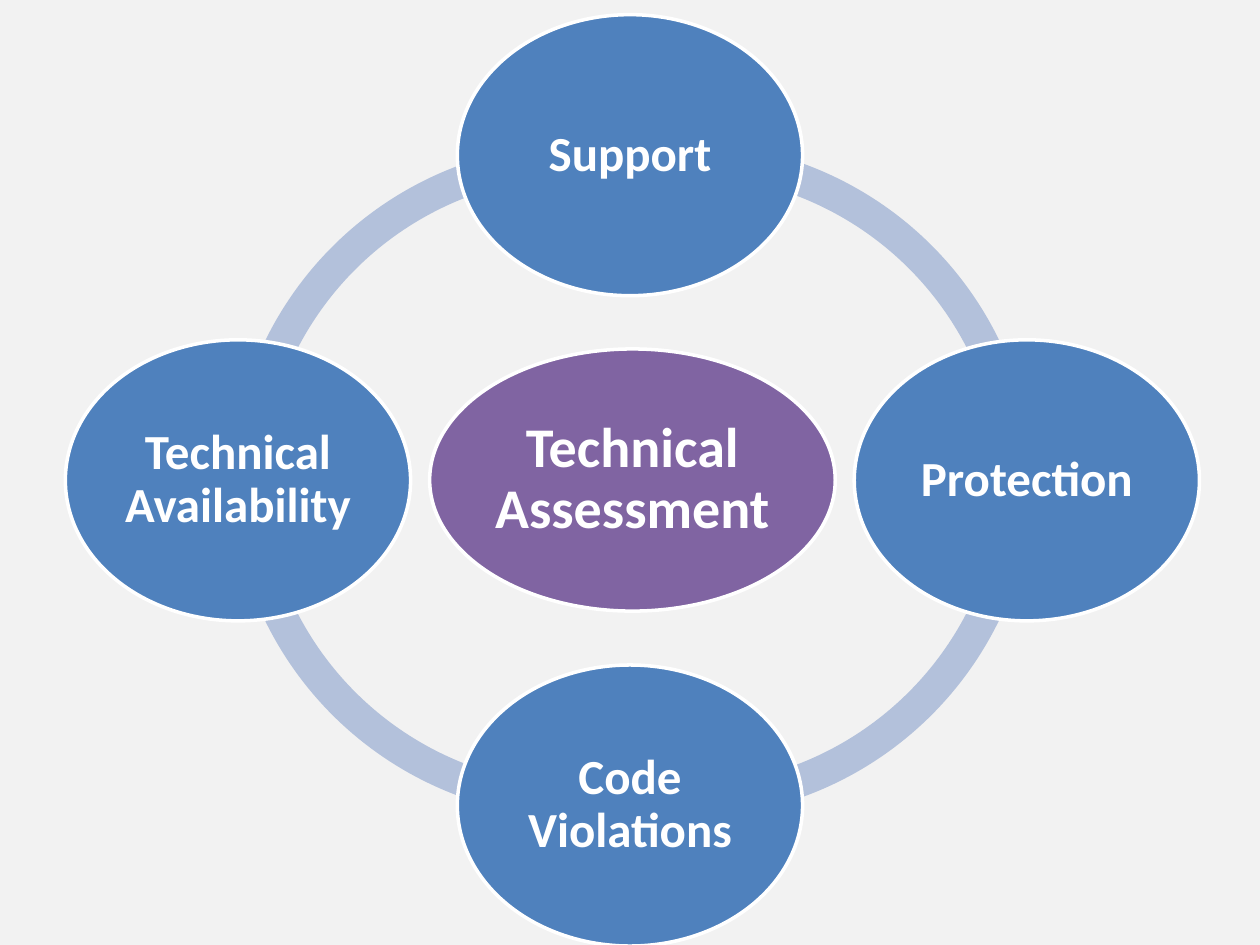
import dataclasses

import pptx
import pptx.dml.color
import pptx.enum.shapes
import pptx.enum.text
import pptx.util

Pt = pptx.util.Pt
RGB = pptx.dml.color.RGBColor.from_string
SHAPES = pptx.enum.shapes.MSO_SHAPE


@dataclasses.dataclass(frozen=True)
class Theme:
    background: str = "F2F2F2"
    ring: str = "B3C1DB"
    hub: str = "8064A2"
    node: str = "4F81BD"
    white: str = "FFFFFF"
    font: str = "Calibri"
    hub_size: int = 32
    node_size: int = 28


THEME = Theme()

# Offsets of each centre from the diagram centre, in points
NODES = [
    ("Support", 0, -185.8),
    ("Protection", 226.8, 0),
    ("Code Violations", 0, 185.8),
    ("Technical Availability", -224, 0),
]
# Offset x, offset y, start and end angle in degrees
ARCS = [
    (-28, 8.5, 182.4, 278.1),
    (-28, -8, 81.9, 177.6),
    (30.3, -8, 2.3, 99),
    (30.3, 7.8, 261, 357.7),
]


def add_centred(slide, kind, centre_x, centre_y, width, height, fill):
    """Add a filled preset shape around its centre."""
    shape = slide.shapes.add_shape(
        kind, Pt(centre_x - width / 2), Pt(centre_y - height / 2), Pt(width), Pt(height))
    shape.shadow.inherit = False
    shape.fill.solid()
    shape.fill.fore_color.rgb = RGB(fill)
    return shape


def add_arc(slide, centre_x, centre_y, start, end):
    """Add one quarter of the ring."""
    diameter, thickness = 401.8, 0.046
    arc = add_centred(slide, SHAPES.BLOCK_ARC, centre_x, centre_y, diameter, diameter, THEME.ring)
    arc.line.fill.background()
    # Adjustments count 0.6 for each degree
    for index, value in enumerate((start * 0.6, end * 0.6, thickness)):
        arc.adjustments[index] = value


def add_label_ellipse(slide, centre_x, centre_y, width, height, text, fill, size):
    """Add an outlined ellipse with a bold centred label."""
    ellipse = add_centred(slide, SHAPES.OVAL, centre_x, centre_y, width, height, fill)
    ellipse.line.color.rgb = RGB(THEME.white)
    ellipse.line.width = Pt(2)

    frame = ellipse.text_frame
    frame_format = {"word_wrap": True, "vertical_anchor": pptx.enum.text.MSO_ANCHOR.MIDDLE}
    for side in ("left", "right", "top", "bottom"):
        frame_format[f"margin_{side}"] = Pt(3)
    paragraph = frame.paragraphs[0]
    run = paragraph.add_run()
    run.text = text
    formats = [
        (frame, frame_format),
        (paragraph, {"alignment": pptx.enum.text.PP_ALIGN.CENTER, "line_spacing": 0.9}),
        (run.font, {"name": THEME.font, "size": Pt(size), "bold": True}),
    ]
    for target, values in formats:
        for name, value in values.items():
            setattr(target, name, value)
    run.font.color.rgb = RGB(THEME.white)


def add_cycle(slide, left, top, width, height):
    """Place the ring, hub and four nodes around the centre of the box."""
    centre_x, centre_y = left + width / 2, top + height / 2

    # Ring
    for offset_x, offset_y, start, end in ARCS:
        add_arc(slide, centre_x + offset_x, centre_y + offset_y, start, end)

    # Hub
    add_label_ellipse(slide, centre_x + 1.4, centre_y - 0.2, 231.8, 149.8,
                      "Technical Assessment", THEME.hub, THEME.hub_size)

    # Nodes
    for text, offset_x, offset_y in NODES:
        add_label_ellipse(slide, centre_x + offset_x, centre_y + offset_y, 197.3, 160.6,
                          text, THEME.node, THEME.node_size)


def main():
    presentation = pptx.Presentation()
    presentation.slide_width, presentation.slide_height = Pt(720), Pt(540)
    slide = presentation.slides.add_slide(presentation.slide_layouts[6])
    slide.background.fill.solid()
    slide.background.fill.fore_color.rgb = RGB(THEME.background)
    add_cycle(slide, 36, 8.5, 648, 532)
    presentation.save("out.pptx")


if __name__ == "__main__":
    main()
